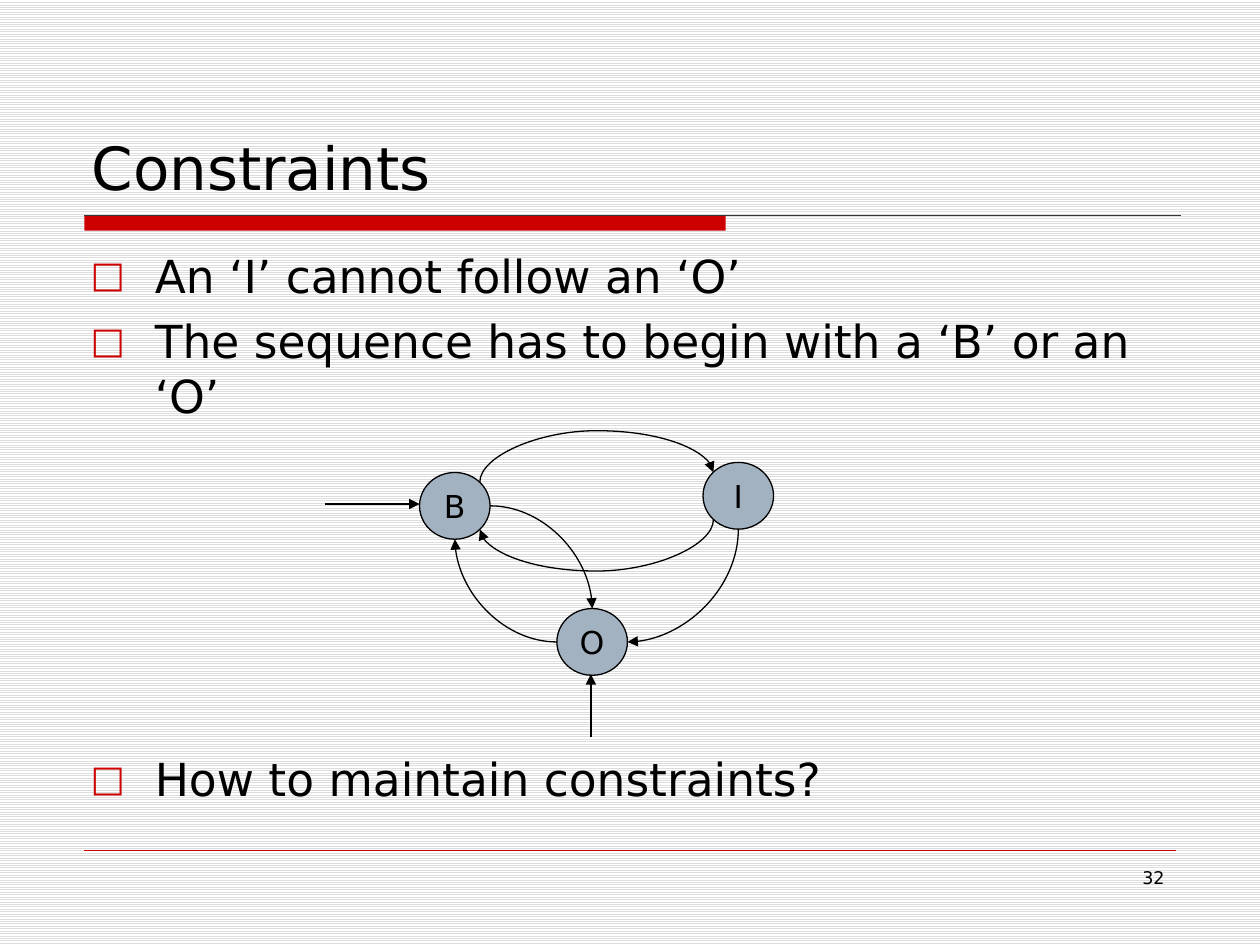
import math

from lxml import etree
from pptx import Presentation
from pptx.dml.color import RGBColor
from pptx.enum.dml import MSO_PATTERN
from pptx.enum.shapes import MSO_CONNECTOR, MSO_SHAPE
from pptx.enum.text import MSO_ANCHOR, PP_ALIGN
from pptx.oxml.ns import qn
from pptx.util import Inches, Pt

STRAIGHT, CURVE = MSO_CONNECTOR.STRAIGHT, MSO_CONNECTOR.CURVE
ELLIPSE, RECTANGLE = MSO_SHAPE.OVAL, MSO_SHAPE.RECTANGLE
STRIPES = MSO_PATTERN.LIGHT_HORIZONTAL
LEFT, CENTER, RIGHT = PP_ALIGN.LEFT, PP_ALIGN.CENTER, PP_ALIGN.RIGHT
TOP, MIDDLE, BOTTOM = MSO_ANCHOR.TOP, MSO_ANCHOR.MIDDLE, MSO_ANCHOR.BOTTOM

FONT = "DejaVu Sans"
BLACK, RED, STATE_FILL = "000000", "CC0000", "A3B2C1"
STATE_WIDTH, STATE_HEIGHT = 0.56, 0.53
BULGE = 0.41  # how far the long curves reach beyond their start
STATES = {"B": (3.33, 3.75), "I": (5.58, 3.67), "O": (4.42, 4.83)}
# Bullet text and the space before it in points
BULLETS = [
    ("An ‘I’ cannot follow an ‘O’", 6),
    ("The sequence has to begin with a ‘B’ or an ‘O’", 6),
    ("How to maintain constraints?", 188),  # leaves room for the diagram
]


def color(value):
    return RGBColor.from_string(value)


def add_child(parent, tag, **attributes):
    return etree.SubElement(parent, qn(tag), attributes)


def write(para, text, size, align=LEFT):
    para.alignment = align
    span = para.add_run()
    span.text = text
    span.font.name = FONT
    span.font.size = Pt(size)
    span.font.color.rgb = color(BLACK)


def add_box(page, left, top, width, height, anchor=TOP):
    box = page.shapes.add_textbox(*map(Inches, (left, top, width, height)))
    box.text_frame.word_wrap = True
    box.text_frame.vertical_anchor = anchor
    return box.text_frame


def add_bullet(para, text, space):
    write(para, text, 26)
    para.space_before = Pt(space)
    properties = para._p.get_or_add_pPr()
    properties.set("marL", str(Inches(0.51)))
    properties.set("indent", str(-Inches(0.51)))
    add_child(add_child(properties, "a:buClr"), "a:srgbClr", val=RED)
    add_child(properties, "a:buSzPct", val="80000")
    add_child(properties, "a:buFont", typeface=FONT)
    add_child(properties, "a:buChar", char="□")


def add_shape(page, kind, left, top, width, height, fill):
    shape = page.shapes.add_shape(kind, *map(Inches, (left, top, width, height)))
    shape.shadow.inherit = False
    shape.fill.solid()
    shape.fill.fore_color.rgb = color(fill)
    return shape


def add_state(page, name):
    state = add_shape(page, ELLIPSE, *STATES[name], STATE_WIDTH, STATE_HEIGHT, STATE_FILL)
    state.line.color.rgb = color(BLACK)
    state.line.width = Pt(0.75)
    frame = state.text_frame
    frame.word_wrap = False
    frame.vertical_anchor = MIDDLE
    write(frame.paragraphs[0], name, 18, align=CENTER)


def add_line(page, start, end, kind=STRAIGHT, line=BLACK, width=0.75, arrow=False):
    connector = page.shapes.add_connector(kind, *map(Inches, (*start, *end)))
    connector.line.color.rgb = color(line)
    connector.line.width = Pt(width)
    properties = connector._element.spPr
    if arrow:
        add_child(properties.find(qn("a:ln")), "a:tailEnd", type="triangle")
    add_child(properties, "a:effectLst")
    return connector


def state_edge(name, degrees):
    """Point on a state's outline, clockwise from its right side."""
    left, top = STATES[name]
    angle = math.radians(degrees)
    return (left + STATE_WIDTH / 2 * (1 + math.cos(angle)),
            top + STATE_HEIGHT / 2 * (1 + math.sin(angle)))


def add_curve(page, start, end, turn, bulge=None):
    """Curved arrow, laid out unturned about its middle and then rotated."""
    middle_x, middle_y = [(a + b) / 2 for a, b in zip(start, end)]
    width, height = [abs(b - a) for a, b in zip(start, end)]
    if turn in (90, 270):
        width, height = height, width
    connector = add_line(
        page,
        (middle_x - width / 2, middle_y - height / 2),
        (middle_x + width / 2, middle_y + height / 2),
        kind=CURVE, arrow=True)
    properties = connector._element.spPr
    properties.find(qn("a:xfrm")).set("rot", str(turn * 60000))
    geometry = properties.find(qn("a:prstGeom"))
    if bulge is None:
        geometry.set("prst", "curvedConnector2")
    else:
        guides = geometry.find(qn("a:avLst"))
        if guides is None:
            guides = add_child(geometry, "a:avLst")
        add_child(guides, "a:gd", name="adj1", fmla=f"val {round(bulge / width * 100000)}")


def add_frame(page):
    # Striped background
    fill = page.background.fill
    fill.patterned()
    fill.pattern = STRIPES
    fill.fore_color.rgb = color("DDDDDD")
    fill.back_color.rgb = color("FFFFFF")
    # Title rule and footer rule
    bar = add_shape(page, RECTANGLE, 0.67, 1.71, 5.09, 0.12, RED)
    bar.line.fill.background()
    add_line(page, (0.67, 1.71), (9.37, 1.71), line="333333")
    add_line(page, (0.67, 6.75), (9.33, 6.75), line=RED, width=0.25)
    # Page number
    number = add_box(page, 7.17, 6.83, 2.17, 0.52)
    write(number.paragraphs[0], "32", 10, align=RIGHT)


def add_diagram(page):
    for name in STATES:
        add_state(page, name)
    # Transitions: from state and angle, to state and angle, turn, bulge
    for source, leave, target, enter, turn, bulge in [
        ("B", 315, "I", 225, 270, BULGE),
        ("I", 135, "B", 45, 90, BULGE),
        ("B", 0, "O", 270, 0, None),
        ("O", 180, "B", 90, 180, None),
        ("I", 90, "O", 0, 90, None),
    ]:
        add_curve(page, state_edge(source, leave), state_edge(target, enter), turn, bulge)
    # Entry arrows
    add_line(page, (2.58, 4), (3.33, 4), arrow=True)
    add_line(page, (4.69, 5.85), (4.69, 5.35), arrow=True)


def main():
    deck = Presentation()
    deck.slide_width, deck.slide_height = Inches(10), Inches(7.5)
    page = deck.slides.add_slide(deck.slide_layouts[6])
    add_frame(page)

    title = add_box(page, 0.63, 0.33, 8.75, 1.33, anchor=BOTTOM)
    write(title.paragraphs[0], "Constraints", 34)

    body = add_box(page, 0.62, 1.92, 8.75, 4.67)
    for index, (text, space) in enumerate(BULLETS):
        para = body.add_paragraph() if index else body.paragraphs[0]
        add_bullet(para, text, space)

    add_diagram(page)
    deck.save("out.pptx")


if __name__ == "__main__":
    main()
